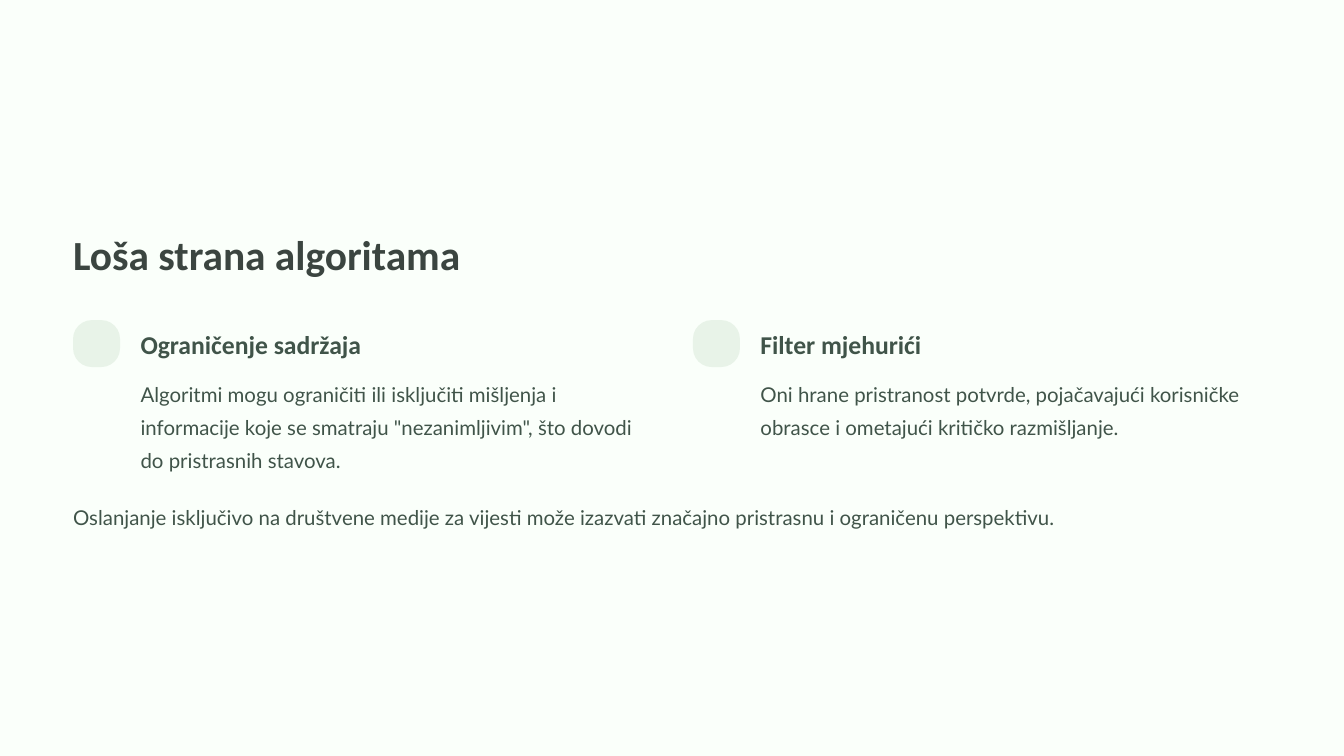
from pptx import Presentation
from pptx import util as u
from pptx.dml.color import RGBColor
from pptx.enum import shapes, text

HUES = {"page": "FAFFFA", "title": "3B4540", "body": "405449", "badge": "E8F3E8"}
HEAD = ("Calibri", 22, 27.5, "body", True)
BODY = ("Lato", 17.5, 28.5, "body", False)
TITLE = ("Calibri", 35.5, 44.5, "title", True)
POINTS = [
    ("Ograničenje sadržaja",
     'Algoritmi mogu ograničiti ili isključiti mišljenja i informacije koje se '
     'smatraju "nezanimljivim", što dovodi do pristrasnih stavova.', 3.02),
    ("Filter mjehurići",
     "Oni hrane pristranost potvrde, pojačavajući korisničke obrasce i "
     "ometajući kritičko razmišljanje.", 2.01),
]


def paint(fill, hue):
    """Give a fill one solid colour."""
    fill.solid()
    fill.fore_color.rgb = RGBColor.from_string(HUES[hue])


def write(slide, box, words, style, wrap=False):
    """Place one line or paragraph of text in a box."""
    face, size, lead, hue, bold = style
    frame = slide.shapes.add_textbox(*map(u.Cm, box)).text_frame
    frame.margin_left = frame.margin_right = 0
    frame.margin_top = frame.margin_bottom = 0
    frame.word_wrap = wrap
    frame.vertical_anchor = text.MSO_ANCHOR.TOP
    para = frame.paragraphs[0]
    para.alignment = text.PP_ALIGN.LEFT
    para.line_spacing = u.Pt(lead)
    run = para.add_run()
    run.text = words
    run.font.name = face
    run.font.size = u.Pt(size)
    run.font.bold = bold
    run.font.color.rgb = RGBColor.from_string(HUES[hue])


def point(slide, box, head, body, deep):
    """Draw a badge with its heading and paragraph."""
    left, top, wide = box
    badge = slide.shapes.add_shape(
        shapes.MSO_SHAPE.ROUNDED_RECTANGLE,
        u.Cm(left), u.Cm(top), u.Cm(1.42), u.Cm(1.42))
    badge.adjustments[0] = 0.4
    badge.shadow.inherit = False
    paint(badge.fill, "badge")
    badge.line.fill.background()
    inset = 2.04
    write(slide, (left + inset, top + 0.23, 7.87, 0.99), head, HEAD)
    write(slide, (left + inset, top + 1.6, wide - inset, deep), body, BODY, True)


def build(slide, box):
    """Lay out the title, the two points and the closing line."""
    left, top, wide = box
    gap = 1.27
    span = (wide - gap) / len(POINTS)
    write(slide, (left, top, 20.45, 1.57), "Loša strana algoritama", TITLE)
    for i, item in enumerate(POINTS):
        point(slide, (left + i * (span + gap), top + 2.82, span), *item)
    write(slide, (left, top + 8.15, wide, 1.02),
          "Oslanjanje isključivo na društvene medije za vijesti može izazvati "
          "značajno pristrasnu i ograničenu perspektivu.", BODY)


def main():
    """Make the deck and save it."""
    deck = Presentation()
    deck.slide_width, deck.slide_height = u.Cm(40.64), u.Cm(22.86)
    slide = deck.slides.add_slide(deck.slide_layouts[6])
    paint(slide.background.fill, "page")
    build(slide, (2.21, 6.86, 36.22))
    deck.save("out.pptx")


if __name__ == "__main__":
    main()
